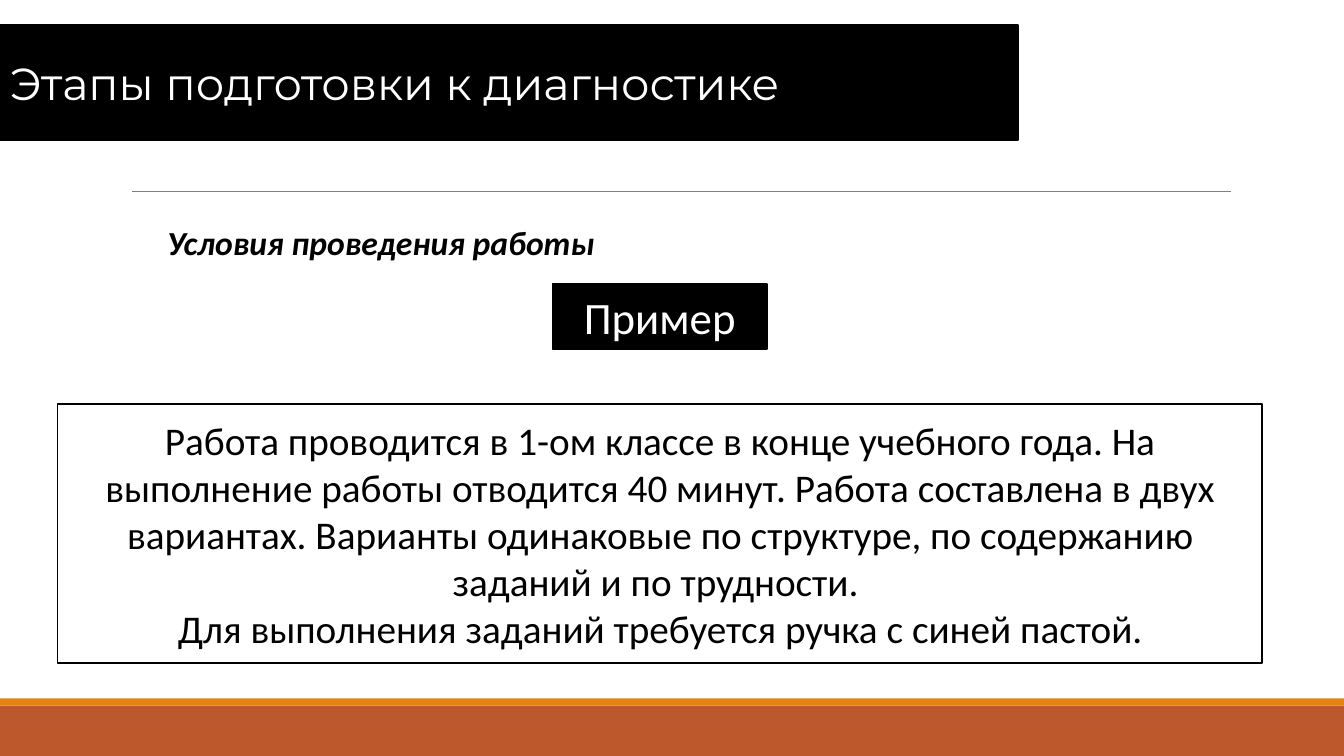
from dataclasses import dataclass

from lxml.etree import SubElement
from pptx import Presentation
from pptx.dml.color import RGBColor
from pptx.enum.shapes import MSO_CONNECTOR, MSO_SHAPE
from pptx.enum.text import MSO_ANCHOR, MSO_AUTO_SIZE, PP_ALIGN
from pptx.oxml.ns import qn
from pptx.util import Inches, Pt


@dataclass(frozen=True)
class Theme:
    """Colours, fonts and sizes of the slide."""
    black: RGBColor = RGBColor(0, 0, 0)
    white: RGBColor = RGBColor(255, 255, 255)
    grey: RGBColor = RGBColor(0x80, 0x80, 0x80)
    rust: RGBColor = RGBColor(0xBD, 0x58, 0x2C)
    orange: RGBColor = RGBColor(0xE4, 0x83, 0x12)
    heading_font: str = "Montserrat"
    body_font: str = "Calibri"
    heading_size: int = 32
    body_size: int = 28
    label_size: int = 24
    border: float = 1.25
    hairline: float = 0.5


THEME = Theme()


def place(shape, box):
    """Move a shape to a box of left, top, width and height in inches."""
    shape.left, shape.top, shape.width, shape.height = map(Inches, box)


def paint(shape, fill=None, line=None):
    """Set the fill and the outline; None leaves either one empty."""
    if fill is None:
        shape.fill.background()
    else:
        shape.fill.solid()
        shape.fill.fore_color.rgb = fill
    if line is None:
        shape.line.fill.background()
    else:
        shape.line.color.rgb = line
        shape.line.width = Pt(THEME.border)


def write(shape, text, size, color, font=THEME.body_font, align=PP_ALIGN.LEFT,
          anchor=MSO_ANCHOR.MIDDLE, emphasis=False):
    """Fill a shape with text, one paragraph for each line."""
    frame = shape.text_frame
    frame.text = text
    frame.word_wrap = True
    frame.auto_size = MSO_AUTO_SIZE.NONE
    frame.vertical_anchor = anchor
    for para in frame.paragraphs:
        para.alignment = align
        for span in para.runs:
            span.font.name = font
            span.font.size = Pt(size)
            span.font.color.rgb = color
            span.font.bold = span.font.italic = emphasis


def add_rectangle(page, box, fill=None, line=None):
    """Add a flat rectangle."""
    shape = page.shapes.add_shape(MSO_SHAPE.RECTANGLE, *map(Inches, box))
    shape.shadow.inherit = False
    paint(shape, fill, line)
    return shape


def add_footer(page, box, stripe=0.07):
    """Draw the footer band with a thin stripe along its top."""
    left, top, width, height = box
    add_rectangle(page, (left, top + stripe, width, height - stripe), THEME.rust)
    add_rectangle(page, (left, top, width, stripe), THEME.orange)


def add_divider(page, left, top, width):
    """Draw the thin horizontal rule below the title."""
    rule = page.shapes.add_connector(
        MSO_CONNECTOR.STRAIGHT, *map(Inches, (left, top, left + width, top)))
    rule.line.color.rgb = THEME.grey
    rule.line.width = Pt(THEME.hairline)
    SubElement(rule._element.spPr, qn("a:effectLst"))


def add_title(page, box, text):
    """Set the title on its black bar."""
    title = page.shapes.title
    place(title, box)
    paint(title, THEME.black, THEME.black)
    write(title, text, THEME.heading_size, THEME.white, THEME.heading_font)


def add_label(page, box, text):
    """Add the bold italic section label."""
    label = page.shapes.add_textbox(*map(Inches, box))
    write(label, text, THEME.label_size, THEME.black,
          anchor=MSO_ANCHOR.TOP, emphasis=True)


def add_example(page, box, tag, text, tag_width=2.13, tag_height=0.64, gap=0.55):
    """Add a framed text with a black tag centred above it."""
    left, top, width, height = box
    tag_box = (left + (width - tag_width) / 2, top, tag_width, tag_height)
    badge = add_rectangle(page, tag_box, THEME.black, THEME.black)
    write(badge, tag, THEME.heading_size, THEME.white, align=PP_ALIGN.CENTER)
    offset = tag_height + gap
    frame = add_rectangle(page, (left, top + offset, width, height - offset),
                          line=THEME.black)
    write(frame, text, THEME.body_size, THEME.black, align=PP_ALIGN.CENTER)


def main():
    """Build the slide and save the deck."""
    deck = Presentation()
    deck.slide_width, deck.slide_height = Inches(13.33), Inches(7.5)
    page = deck.slides.add_slide(deck.slide_layouts[5])
    add_footer(page, (0, 6.93, 13.33, 0.57))
    add_divider(page, 1.31, 1.9, 10.9)
    add_title(page, (0, 0.25, 10.1, 1.14), "Этапы подготовки к диагностике")
    add_label(page, (1.56, 2.15, 6.13, 0.5), "Условия проведения работы")
    add_example(
        page, (0.57, 2.82, 11.95, 3.76), "Пример",
        "Работа проводится в 1-ом классе в конце учебного года. "
        "На выполнение работы отводится 40 минут. "
        "Работа составлена в двух вариантах. "
        "Варианты одинаковые по структуре, по содержанию заданий и по трудности. \n"
        "Для выполнения заданий требуется ручка с синей пастой.")
    deck.save("out.pptx")


if __name__ == "__main__":
    main()
